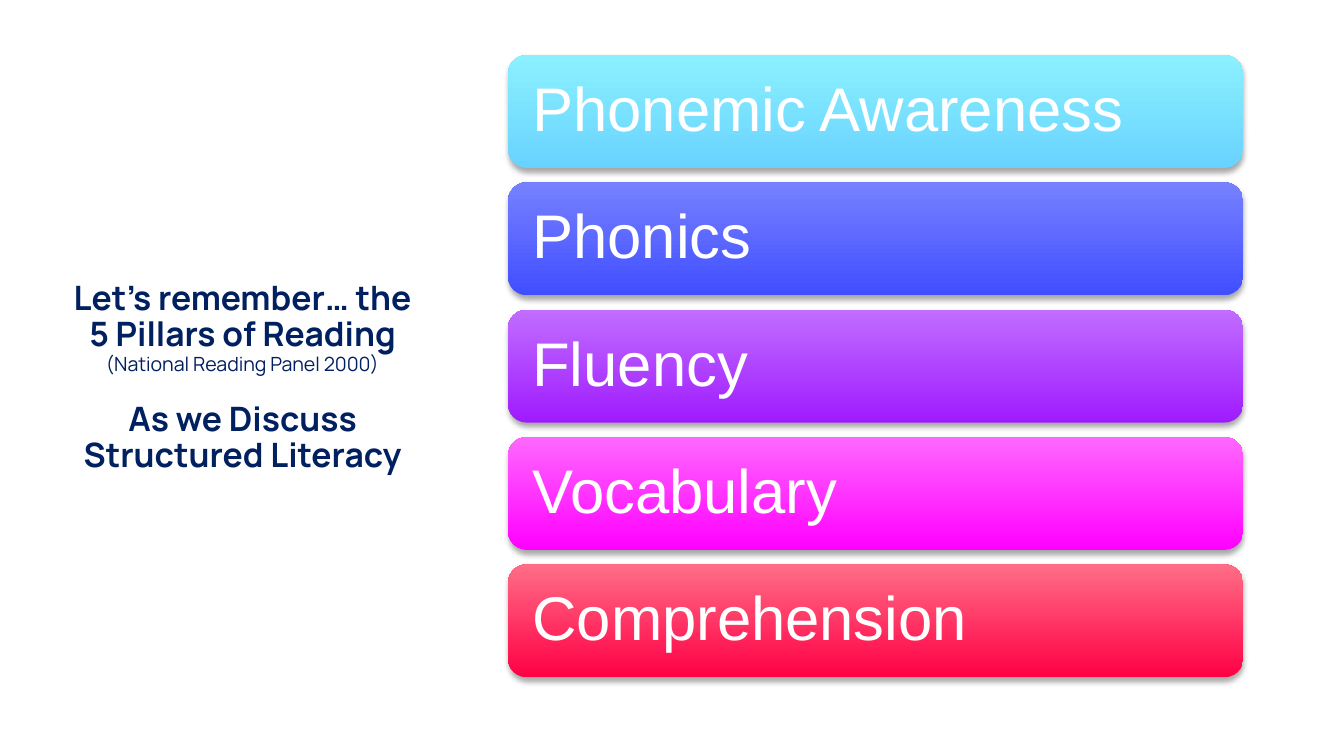
import lxml.etree
import pptx
import pptx.dml.color
import pptx.enum.shapes
import pptx.enum.text
import pptx.oxml
import pptx.oxml.ns
import pptx.util

Inches = pptx.util.Inches
Pt = pptx.util.Pt
RGBColor = pptx.dml.color.RGBColor

NAVY = RGBColor(0x00, 0x20, 0x60)
WHITE = RGBColor(0xFF, 0xFF, 0xFF)

TITLE_LINES = [
    ("Let’s remember… the 5 Pillars of Reading", 18, True, 0),
    ("(National Reading Panel 2000)", 10.5, False, 0),
    ("As we Discuss Structured Literacy", 18, True, 14.5),
]
PILLARS = [
    ("Phonemic Awareness", RGBColor(0x69, 0xD3, 0xFF), RGBColor(0x8B, 0xF0, 0xFF)),
    ("Phonics", RGBColor(0x41, 0x4E, 0xFF), RGBColor(0x76, 0x81, 0xFF)),
    ("Fluency", RGBColor(0x9F, 0x1B, 0xFF), RGBColor(0xC1, 0x6D, 0xFF)),
    ("Vocabulary", RGBColor(0xFF, 0x00, 0xFF), RGBColor(0xFF, 0x68, 0xFF)),
    ("Comprehension", RGBColor(0xFF, 0x00, 0x45), RGBColor(0xFF, 0x6D, 0x86)),
]
SHADOW_XML = (
    f'<a:outerShdw {pptx.oxml.ns.nsdecls("a")} blurRad="{Pt(3.1)}" dist="{Pt(1.8)}" '
    'dir="5400000" rotWithShape="0">'
    '<a:srgbClr val="000000"><a:alpha val="35000"/></a:srgbClr></a:outerShdw>'
)


def set_frame(tf, inset_x, inset_y):
    """Give a text frame its insets, wrapping and middle anchor."""
    tf.word_wrap = True
    tf.auto_size = pptx.enum.text.MSO_AUTO_SIZE.NONE
    tf.vertical_anchor = pptx.enum.text.MSO_ANCHOR.MIDDLE
    tf.margin_left = tf.margin_right = Inches(inset_x)
    tf.margin_top = tf.margin_bottom = Inches(inset_y)


def format_paragraph(p, align, font_name, size, color, bold=False):
    """Set the alignment, line spacing and run font of a paragraph."""
    p.alignment = align
    p.line_spacing = 0.9
    for r in p.runs:
        r.font.name = font_name
        r.font.size = Pt(size)
        r.font.bold = bold
        r.font.color.rgb = color


def add_title(s, left, top, width, height):
    """Fill the title placeholder with the heading and its source."""
    sp = s.shapes.title
    sp.left, sp.top = Inches(left), Inches(top)
    sp.width, sp.height = Inches(width), Inches(height)
    tf = sp.text_frame
    set_frame(tf, 0.07, 0.04)
    tf.text = "\n".join(line[0] for line in TITLE_LINES)
    for p, (_, size, bold, before) in zip(tf.paragraphs, TITLE_LINES):
        format_paragraph(p, pptx.enum.text.PP_ALIGN.CENTER, "Manrope", size, NAVY, bold)
        p.space_before = Pt(before)


def add_bar(s, left, top, width, height, label, dark, light):
    """Add one rounded gradient bar with its label."""
    sp = s.shapes.add_shape(
        pptx.enum.shapes.MSO_SHAPE.ROUNDED_RECTANGLE,
        Inches(left), Inches(top), Inches(width), Inches(height),
    )
    sp.fill.gradient()
    sp.fill.gradient_angle = 90
    for stop, color in zip(sp.fill.gradient_stops, (dark, light)):
        stop.color.rgb = color
    sp.line.fill.background()
    sp.shadow.inherit = False
    effects = sp._element.spPr.find(pptx.oxml.ns.qn("a:effectLst"))
    effects.append(lxml.etree.fromstring(SHADOW_XML))
    tf = sp.text_frame
    set_frame(tf, 0.14, 0.14)
    tf.text = label
    format_paragraph(tf.paragraphs[0], pptx.enum.text.PP_ALIGN.LEFT, "Arial", 33, WHITE)


def add_pillars(s, left, top, width, height):
    """Stack the five pillars with equal gaps inside the box."""
    bar_height = 0.84
    pitch = (height - bar_height) / (len(PILLARS) - 1)
    for i, (label, dark, light) in enumerate(PILLARS):
        add_bar(s, left, top + i * pitch, width, bar_height, label, dark, light)


def main():
    """Build the slide and save it."""
    prs = pptx.Presentation()
    prs.slide_width = Inches(10)
    prs.slide_height = prs.slide_width * 9 // 16
    s = prs.slides.add_slide(prs.slide_layouts[5])
    add_title(s, 0.44, 0.89, 2.73, 3.85)
    add_pillars(s, 3.78, 0.41, 5.47, 4.63)
    prs.save("out.pptx")


if __name__ == "__main__":
    main()
